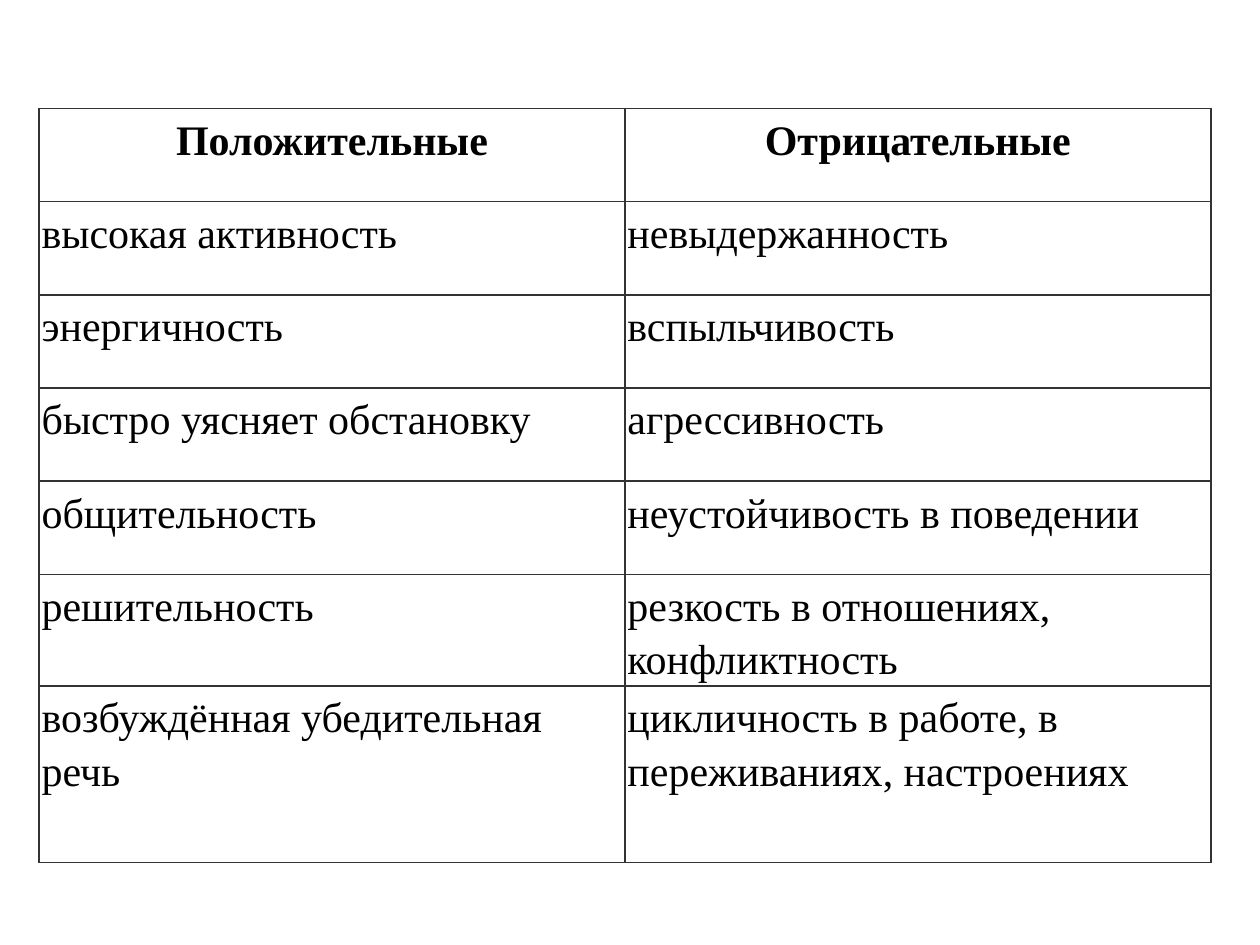
from dataclasses import dataclass

from lxml.etree import SubElement
from pptx import Presentation
from pptx.dml.color import RGBColor
from pptx.enum.text import PP_ALIGN
from pptx.oxml.ns import qn
from pptx.util import Inches, Pt


@dataclass(frozen=True)
class Theme:
    font: str = "Times New Roman"
    size: int = 24
    ink: str = "000000"
    paper: str = "FFFFFF"
    rule: str = "333333"
    rule_width: int = 1


theme = Theme()

traits = [
    ("Положительные", "Отрицательные"),
    ("высокая активность", "невыдержанность"),
    ("энергичность", "вспыльчивость"),
    ("быстро уясняет обстановку", "агрессивность"),
    ("общительность", "неустойчивость в поведении"),
    ("решительность", "резкость в отношениях, конфликтность"),
    ("возбуждённая убедительная речь", "цикличность в работе, в переживаниях, настроениях"),
]
column_width = Inches(4.65)
row_heights = [Inches(0.74)] * (len(traits) - 1) + [Inches(1.4)]
cell_margin = Inches(0.02)


def add_borders(cell):
    properties = cell._tc.get_or_add_tcPr()
    for side in ("L", "R", "T", "B"):
        border = SubElement(properties, qn(f"a:ln{side}"), w=str(Pt(theme.rule_width)))
        fill = SubElement(border, qn("a:solidFill"))
        SubElement(fill, qn("a:srgbClr"), val=theme.rule)


presentation = Presentation()
presentation.slide_width = Inches(10)
presentation.slide_height = Inches(7.5)
slide = presentation.slides.add_slide(presentation.slide_layouts[6])

comparison = slide.shapes.add_table(
    len(traits), 2, Inches(0.31), Inches(0.86), 2 * column_width, sum(row_heights)
).table
for column in comparison.columns:
    column.width = column_width

for row_index, (pair, height) in enumerate(zip(traits, row_heights)):
    comparison.rows[row_index].height = height
    is_header = row_index == 0
    for column_index, trait in enumerate(pair):
        cell = comparison.cell(row_index, column_index)
        cell.margin_left = cell.margin_right = cell_margin
        cell.margin_top = cell.margin_bottom = cell_margin
        add_borders(cell)
        cell.fill.solid()
        cell.fill.fore_color.rgb = RGBColor.from_string(theme.paper)

        paragraph = cell.text_frame.paragraphs[0]
        paragraph.alignment = PP_ALIGN.CENTER if is_header else PP_ALIGN.LEFT
        paragraph.line_spacing = 1.15
        run = paragraph.add_run()
        run.text = trait
        run.font.name = theme.font
        run.font.size = Pt(theme.size)
        run.font.bold = is_header
        run.font.color.rgb = RGBColor.from_string(theme.ink)

presentation.save("out.pptx")
